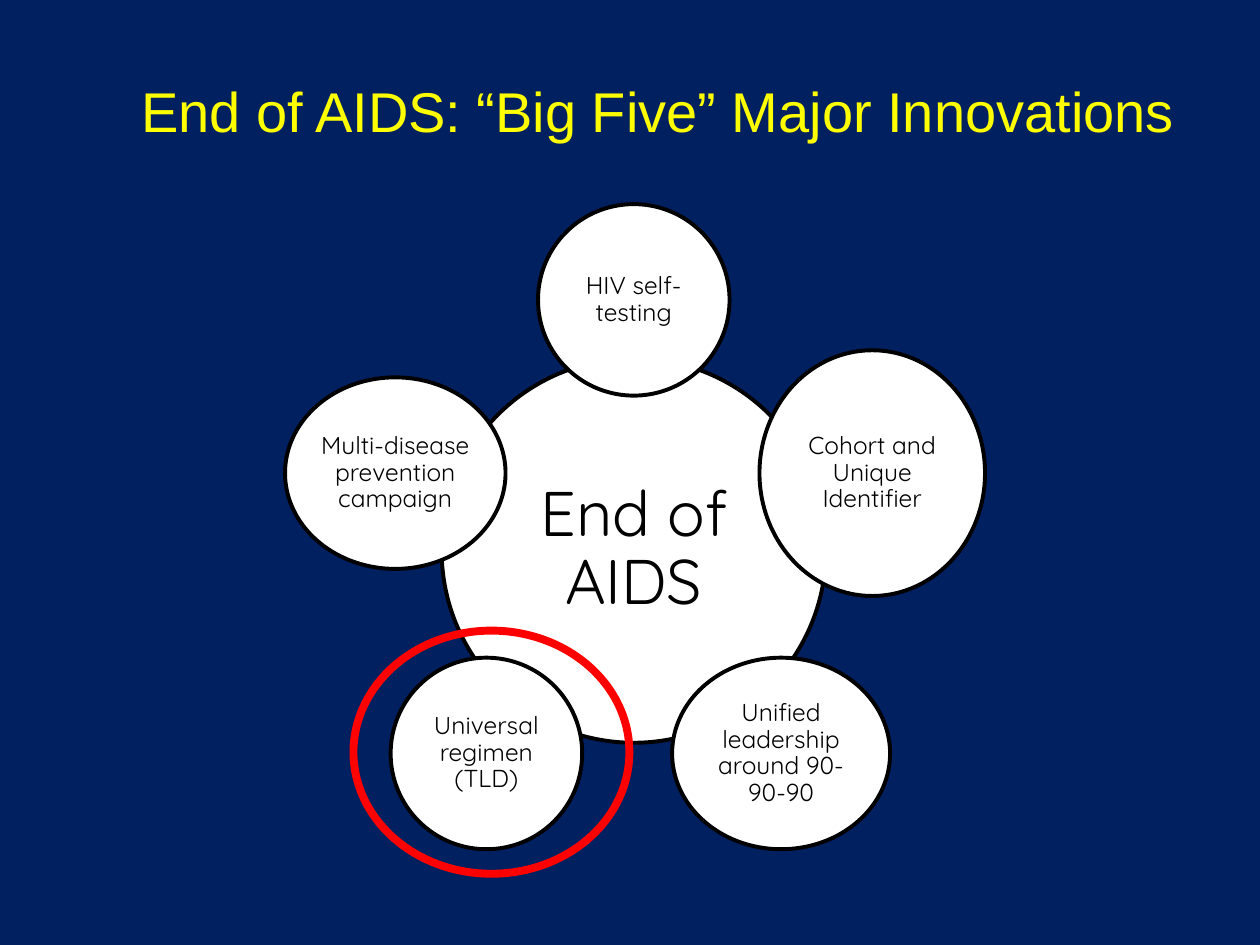
import math

from pptx import Presentation
from pptx import util as u
from pptx.dml.color import RGBColor
from pptx.enum import shapes, text


def colour(code):
    return RGBColor.from_string(code)


class SlideBuilder:
    ink = "000000"
    paper = "FFFFFF"
    navy = "002060"
    yellow = "FFFF00"
    red = "FF0000"
    title_font = "Arial"
    body_font = "Quicksand"

    def __init__(self, deck):
        self.page = deck.slides.add_slide(deck.slide_layouts[6])
        fill = self.page.background.fill
        fill.solid()
        fill.fore_color.rgb = colour(self.navy)

    def label(self, frame, wording, size, font, code):
        frame.word_wrap = True
        para = frame.paragraphs[0]
        para.alignment = text.PP_ALIGN.CENTER
        span = para.add_run()
        span.text = wording
        span.font.size = u.Pt(size)
        span.font.name = font
        span.font.color.rgb = colour(code)
        return para

    def title(self, wording, left, top, width, height):
        box = self.page.shapes.add_textbox(*map(u.Inches, (left, top, width, height)))
        self.label(box.text_frame, wording, 32, self.title_font, self.yellow)
        box.text_frame.auto_size = text.MSO_AUTO_SIZE.SHAPE_TO_FIT_TEXT

    def ellipse(self, centre, width, height, line, weight):
        left, top = centre[0] - width / 2, centre[1] - height / 2
        oval = self.page.shapes.add_shape(
            shapes.MSO_SHAPE.OVAL, *map(u.Inches, (left, top, width, height))
        )
        oval.shadow.inherit = False
        oval.fill.background()
        oval.line.color.rgb = colour(line)
        oval.line.width = u.Pt(weight)
        return oval

    def bubble(self, wording, centre, width, height, size, inset):
        oval = self.ellipse(centre, width, height, self.ink, 2.25)
        oval.fill.solid()
        oval.fill.fore_color.rgb = colour(self.paper)
        frame = oval.text_frame
        frame.margin_left = frame.margin_right = u.Inches(inset)
        frame.margin_top = frame.margin_bottom = u.Inches(inset)
        frame.vertical_anchor = text.MSO_ANCHOR.MIDDLE
        para = self.label(frame, wording, size, self.body_font, self.ink)
        para.line_spacing = 0.9

    def ring(self, centre, width, height):
        self.ellipse(centre, width, height, self.red, 4.5)


def main():
    deck = Presentation()
    deck.slide_width = u.Inches(10)
    deck.slide_height = u.Inches(7.5)
    builder = SlideBuilder(deck)
    builder.title("End of AIDS: “Big Five” Major Innovations", 0.44, 0.56, 9.57, 0.64)

    hub = (5.03, 4.37)
    orbit = 1.99
    innovations = [
        ("HIV self-testing", 1.52, 1.52),
        ("Cohort and Unique Identifier", 1.79, 1.95),
        ("Unified leadership around 90-90-90", 1.73, 1.52),
        ("Universal regimen (TLD)", 1.52, 1.52),
        ("Multi-disease prevention campaign", 1.75, 1.52),
    ]
    builder.bubble("End of AIDS", hub, 3.05, 3.05, 36, 0.05)
    for index, (wording, width, height) in enumerate(innovations):
        angle = math.tau * index / len(innovations)
        centre = (
            hub[0] + orbit * math.sin(angle),
            hub[1] - orbit * math.cos(angle),
        )
        builder.bubble(wording, centre, width, height, 14, 0.02)
    builder.ring((3.9, 5.97), 2.19, 1.93)
    deck.save("out.pptx")


if __name__ == "__main__":
    main()
